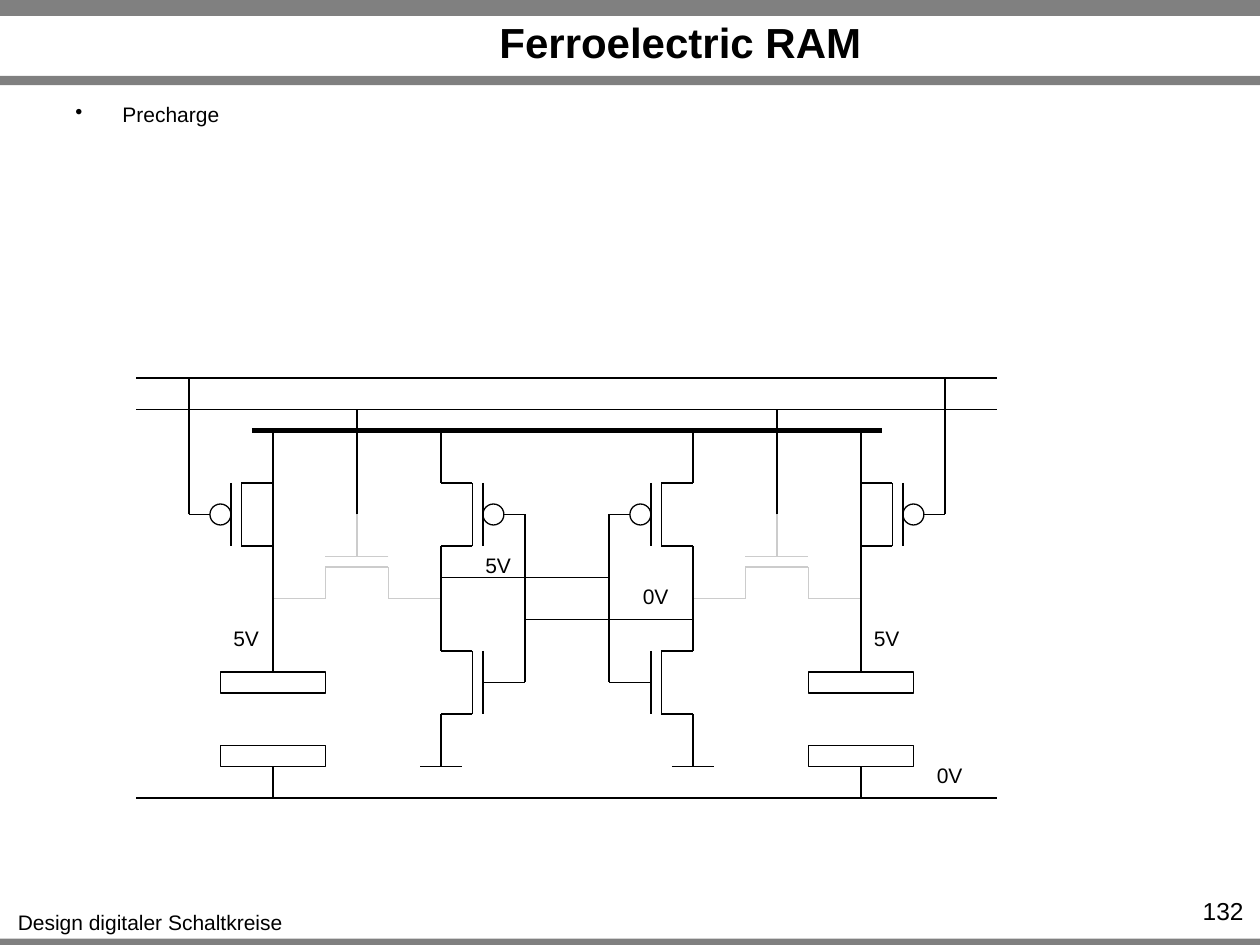
from pptx import Presentation
from pptx.dml.color import RGBColor
from pptx.enum.shapes import MSO_CONNECTOR, MSO_SHAPE
from pptx.enum.text import MSO_ANCHOR, PP_ALIGN
from pptx.oxml.ns import qn
from pptx.util import Cm, Pt
from lxml import etree

BLACK = RGBColor(0x00, 0x00, 0x00)
GREY = RGBColor(0x80, 0x80, 0x80)
PALE = RGBColor(0xCC, 0xCC, 0xCC)
STRAIGHT = MSO_CONNECTOR.STRAIGHT
RECTANGLE, OVAL = MSO_SHAPE.RECTANGLE, MSO_SHAPE.OVAL
LEFT, CENTER, RIGHT = PP_ALIGN.LEFT, PP_ALIGN.CENTER, PP_ALIGN.RIGHT
MIDDLE = MSO_ANCHOR.MIDDLE
FONT = "Arial"
PAGE_WIDTH, PAGE_HEIGHT = 25.4, 19.05
UNIT = 2.54 / 12
TITLE_ONLY = 5


def format_text(frame, size, align, bold=False):
    for para in frame.paragraphs:
        para.alignment = align
        for span in para.runs:
            span.font.name = FONT
            span.font.size = Pt(size)
            span.font.bold = bold
            span.font.color.rgb = BLACK


def add_text(page, text, left, top, width, height, size, align, wrap=True):
    box = page.shapes.add_textbox(Cm(left), Cm(top), Cm(width), Cm(height))
    box.text_frame.word_wrap = wrap
    box.text_frame.text = text
    format_text(box.text_frame, size, align)
    return box


def add_bands(page):
    for top, height in ((0, 0.32), (1.53, 0.19), (18.92, 0.2)):
        band = page.shapes.add_shape(
            RECTANGLE, 0, Cm(top), Cm(PAGE_WIDTH), Cm(height))
        band.shadow.inherit = False
        band.fill.solid()
        band.fill.fore_color.rgb = GREY
        band.line.fill.background()


def add_title(page, left, top, width, height):
    title = page.shapes.title
    title.left, title.top = Cm(left), Cm(top)
    title.width, title.height = Cm(width), Cm(height)
    title.text_frame.text = "Ferroelectric RAM"
    title.text_frame.vertical_anchor = MIDDLE
    format_text(title.text_frame, 24, CENTER, bold=True)


def add_body(page, left, top, width, height):
    body = add_text(page, "Precharge", left, top, width, height, 12, LEFT)
    properties = body.text_frame.paragraphs[0]._p.get_or_add_pPr()
    properties.set("marL", str(Cm(0.95)))
    properties.set("indent", str(Cm(-0.95)))
    etree.SubElement(properties, qn("a:buChar")).set("char", "•")


def add_footer(page, top):
    add_text(page, "Design digitaler Schaltkreise", 0.08, top,
             5.9, 0.76, 12, CENTER, wrap=False)
    add_text(page, "132", 23.11, top - 0.28, 2.21, 0.6, 14, RIGHT)


class Circuit:
    WIDTH = 82
    WORD_LINE, BUS, GROUND, PLATE_LINE = 3, 5, 37, 40

    def __init__(self, page, left, top):
        self.page, self.left, self.top = page, left, top
        self.axis, self.side = 0, 1

    def place(self, x, y):
        return (Cm(self.left + (self.axis + self.side * x) * UNIT),
                Cm(self.top + y * UNIT))

    def wire(self, *points, color=BLACK, weight=0.75):
        for start, end in zip(points, points[1:]):
            line = self.page.shapes.add_connector(
                STRAIGHT, *self.place(*start), *self.place(*end))
            line.line.color.rgb = color
            line.line.width = Pt(weight)
            etree.SubElement(line._element.spPr, qn("a:effectLst"))

    def outline(self, kind, x, y, width, height):
        corner = x if self.side > 0 else x + width
        shape = self.page.shapes.add_shape(
            kind, *self.place(corner, y), Cm(width * UNIT), Cm(height * UNIT))
        shape.shadow.inherit = False
        shape.fill.background()
        shape.line.color.rgb = BLACK
        shape.line.width = Pt(0.75)

    def transistor(self, x, y, toward, inverted=False):
        channel, gate, lead = (x + toward * step for step in (3, 4, 8))
        self.wire((x, y), (channel, y), (channel, y + 6), (x, y + 6))
        self.wire((gate, y), (gate, y + 6))
        contact = gate
        if inverted:
            contact = gate + 2 * toward
            self.outline(OVAL, min(gate, contact), y + 2, 2, 2)
        self.wire((contact, y + 3), (lead, y + 3))

    def inverter(self, x):
        self.wire((x, self.BUS), (x, 10))
        self.transistor(x, 10, -1, inverted=True)
        self.wire((x, 16), (x, 26))
        self.transistor(x, 26, -1)
        self.wire((x, 32), (x, self.GROUND))
        self.wire((x - 2, self.GROUND), (x + 2, self.GROUND))
        self.wire((x - 8, 13), (x - 8, 29))

    def pass_gate(self, x, inner, outer):
        self.wire((inner, 21), (x - 3, 21), (x - 3, 18), (x + 3, 18),
                  (x + 3, 21), (outer, 21), color=PALE)
        self.wire((x - 3, 17), (x + 3, 17), color=PALE)
        self.wire((x, 17), (x, 13), color=PALE)
        self.wire((x, 13), (x, self.WORD_LINE))

    def storage(self, x):
        self.wire((x, self.BUS), (x, 28))
        self.transistor(x, 10, 1, inverted=True)
        self.wire((x + 8, 13), (x + 8, 0))
        for y in (28, 35):
            self.outline(RECTANGLE, x - 5, y, 10, 2)
        self.wire((x, self.GROUND), (x, self.PLATE_LINE))

    def draw(self):
        for y in (0, self.WORD_LINE, self.PLATE_LINE):
            self.wire((0, y), (self.WIDTH, y))
        self.axis = self.WIDTH / 2
        for self.side in (1, -1):
            self.pass_gate(20, 12, 28)
            self.inverter(12)
            self.storage(28)
        self.side = 1
        self.wire((-12, 19), (4, 19))
        self.wire((-4, 23), (12, 23))
        self.wire((-30, self.BUS), (30, self.BUS), weight=3)
        self.axis = 0
        for text, x, y in (("5V", 8, 23), ("5V", 69, 23), ("0V", 75, 36),
                           ("5V", 32, 16), ("0V", 47, 19)):
            add_text(self.page, text, self.left + x * UNIT,
                     self.top + y * UNIT, 1.04, 0.76, 12, CENTER, wrap=False)


def main():
    deck = Presentation()
    deck.slide_width, deck.slide_height = Cm(PAGE_WIDTH), Cm(PAGE_HEIGHT)
    page = deck.slides.add_slide(deck.slide_layouts[TITLE_ONLY])
    add_bands(page)
    add_title(page, 3.3, 0.36, 20.83, 0.97)
    add_body(page, 1.27, 1.93, 22.86, 1.68)
    add_footer(page, 18.21)
    Circuit(page, 2.75, 7.62).draw()
    deck.save("out.pptx")


if __name__ == "__main__":
    main()
